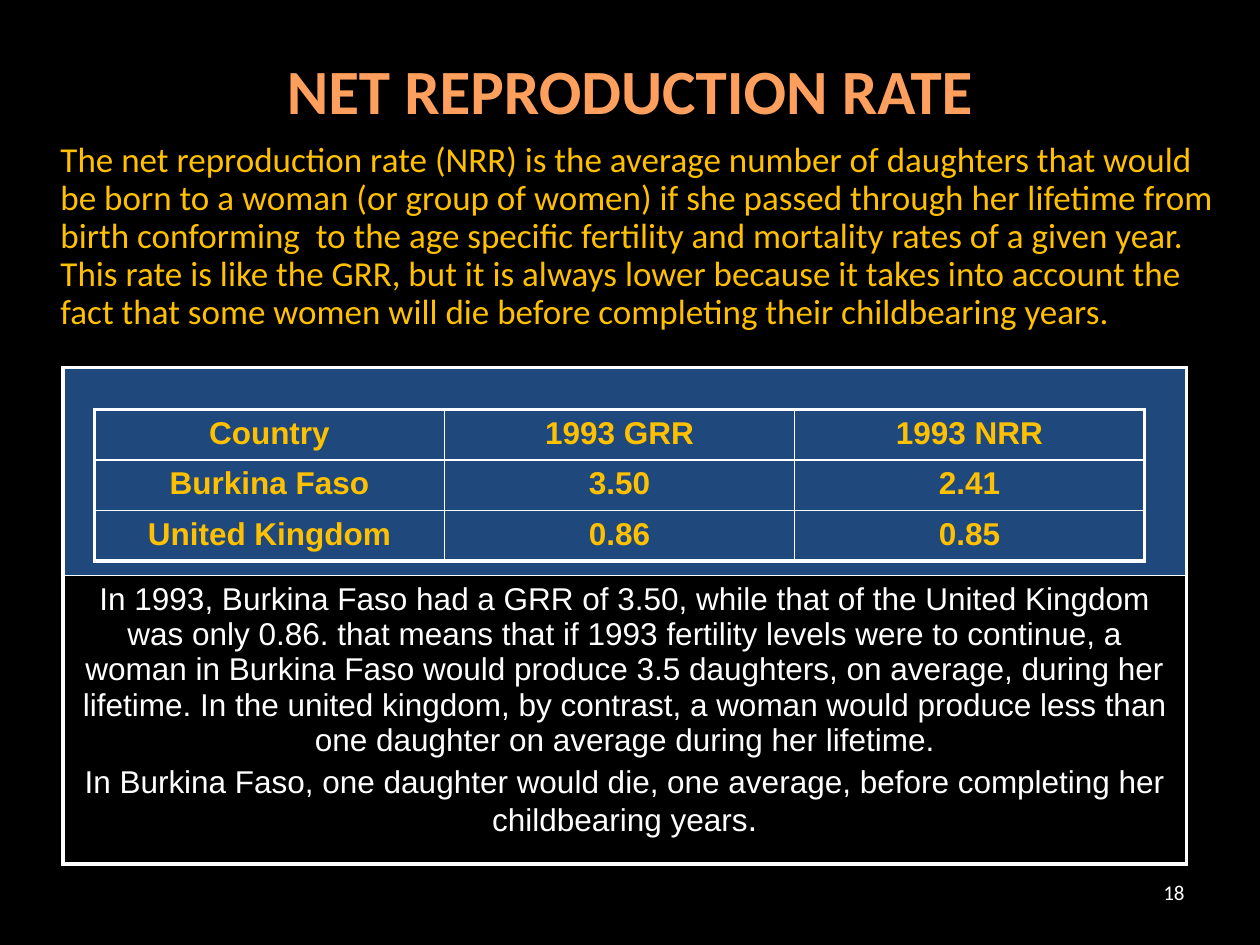
import pptx
import pptx.util
import pptx.dml.color
import pptx.enum.text
import lxml.etree

# Grid: 12 units to the inch, 120 columns by 90 rows
COLS, ROWS = 120, 90
UNIT = pptx.util.Inches(1 / 12)
ALIGN = pptx.enum.text.PP_ALIGN
MID = pptx.enum.text.MSO_ANCHOR.MIDDLE
WHITE, GOLD, PEACH, NAVY = "FFFFFF", "FFC000", "FF9F5D", "1F497D"
THICK, THIN = 2.25, 1

INTRO = (
    "The net reproduction rate (NRR) is the average number of daughters that "
    "would be born to a woman (or group of women) if she passed through her "
    "lifetime from birth conforming  to the age specific fertility and mortality "
    "rates of a given year. This rate is like the GRR, but it is always lower "
    "because it takes into account the fact that some women will die before "
    "completing their childbearing years."
)
NOTE = (
    "In 1993, Burkina Faso had a GRR of 3.50, while that of the United Kingdom "
    "was only 0.86. that means that if 1993 fertility levels were to continue, a "
    "woman in Burkina Faso would produce 3.5 daughters, on average, during her "
    "lifetime. In the united kingdom, by contrast, a woman would produce less "
    "than one daughter on average during her lifetime."
)
LOSS = ("In Burkina Faso, one daughter would die, one average, "
        "before completing her childbearing years")
RATES = [
    ["Country", "1993 GRR", "1993 NRR"],
    ["Burkina Faso", "3.50", "2.41"],
    ["United Kingdom", "0.86", "0.85"],
]


def span(count):
    return round(count * UNIT)


def tint(code):
    return pptx.dml.color.RGBColor.from_string(code)


def add_run(para, text, size, color, font="Calibri", bold=False):
    run = para.add_run()
    run.text = text
    run.font.size = pptx.util.Pt(size)
    run.font.name = font
    run.font.bold = bold
    run.font.color.rgb = tint(color)


def add_box(slide, left, top, width, height, align):
    box = slide.shapes.add_textbox(*map(span, (left, top, width, height)))
    frame = box.text_frame
    frame.word_wrap = True
    frame.paragraphs[0].alignment = align
    return frame


def add_edge(cell, side, width):
    line = lxml.etree.SubElement(
        cell._tc.get_or_add_tcPr(), pptx.oxml.ns.qn("a:ln" + side),
        w=str(pptx.util.Pt(width)))
    fill = lxml.etree.SubElement(line, pptx.oxml.ns.qn("a:solidFill"))
    lxml.etree.SubElement(fill, pptx.oxml.ns.qn("a:srgbClr"), val=WHITE)


def add_grid(slide, left, top, width, highs, cols):
    """Clear table with a thick frame and thin inner lines."""
    rows = len(highs)
    table = slide.shapes.add_table(
        rows, cols, *map(span, (left, top, width, sum(highs)))).table
    table.first_row = table.horz_banding = False
    for row, high in zip(table.rows, highs):
        row.height = span(high)
    for r in range(rows):
        for c in range(cols):
            cell = table.cell(r, c)
            outer = {"L": c == 0, "R": c == cols - 1,
                     "T": r == 0, "B": r == rows - 1}
            for side, rim in outer.items():
                add_edge(cell, side, THICK if rim else THIN)
            cell.fill.background()
    return table


def add_panel(slide):
    table = add_grid(slide, 6, 35, 107, [19.8, 26.28], 1)
    head = table.cell(0, 0)
    head.fill.solid()
    head.fill.fore_color.rgb = tint(NAVY)
    frame = table.cell(1, 0).text_frame
    first, last = frame.paragraphs[0], frame.add_paragraph()
    first.alignment = last.alignment = ALIGN.CENTER
    last.space_before = pptx.util.Pt(4)
    add_run(first, NOTE, 18, WHITE, "Arial")
    add_run(last, LOSS, 18, WHITE, "Arial")
    add_run(last, ".", 20, WHITE, "Arial")


def add_rates(slide):
    table = add_grid(slide, 9, 39, 100, [4.58] * len(RATES), len(RATES[0]))
    for r, row in enumerate(RATES):
        for c, text in enumerate(row):
            para = table.cell(r, c).text_frame.paragraphs[0]
            para.alignment = ALIGN.CENTER
            add_run(para, text, 18, GOLD, "Arial", True)


def main():
    deck = pptx.Presentation()
    deck.slide_width, deck.slide_height = span(COLS), span(ROWS)
    slide = deck.slides.add_slide(deck.slide_layouts[6])
    slide.background.fill.solid()
    slide.background.fill.fore_color.rgb = tint("000000")

    # Page number
    page = add_box(slide, 86, 82, 28, 6, ALIGN.RIGHT)
    page.vertical_anchor = MID
    add_run(page.paragraphs[0], "18", 12, WHITE)

    # Title
    title = add_box(slide, 6, 4, 108, 9, ALIGN.CENTER)
    title.vertical_anchor = MID
    add_run(title.paragraphs[0], "NET REPRODUCTION RATE", 36, PEACH, bold=True)

    # Definition
    body = add_box(slide, 0, 13, 118, 25, ALIGN.LEFT)
    body.margin_left = pptx.util.Inches(0.48)
    para = body.paragraphs[0]
    para.line_spacing = 0.9
    para.space_before = pptx.util.Pt(4)
    add_run(para, INTRO, 20, GOLD)

    # Panel with the table of rates on it
    add_panel(slide)
    add_rates(slide)
    deck.save("out.pptx")


if __name__ == "__main__":
    main()
